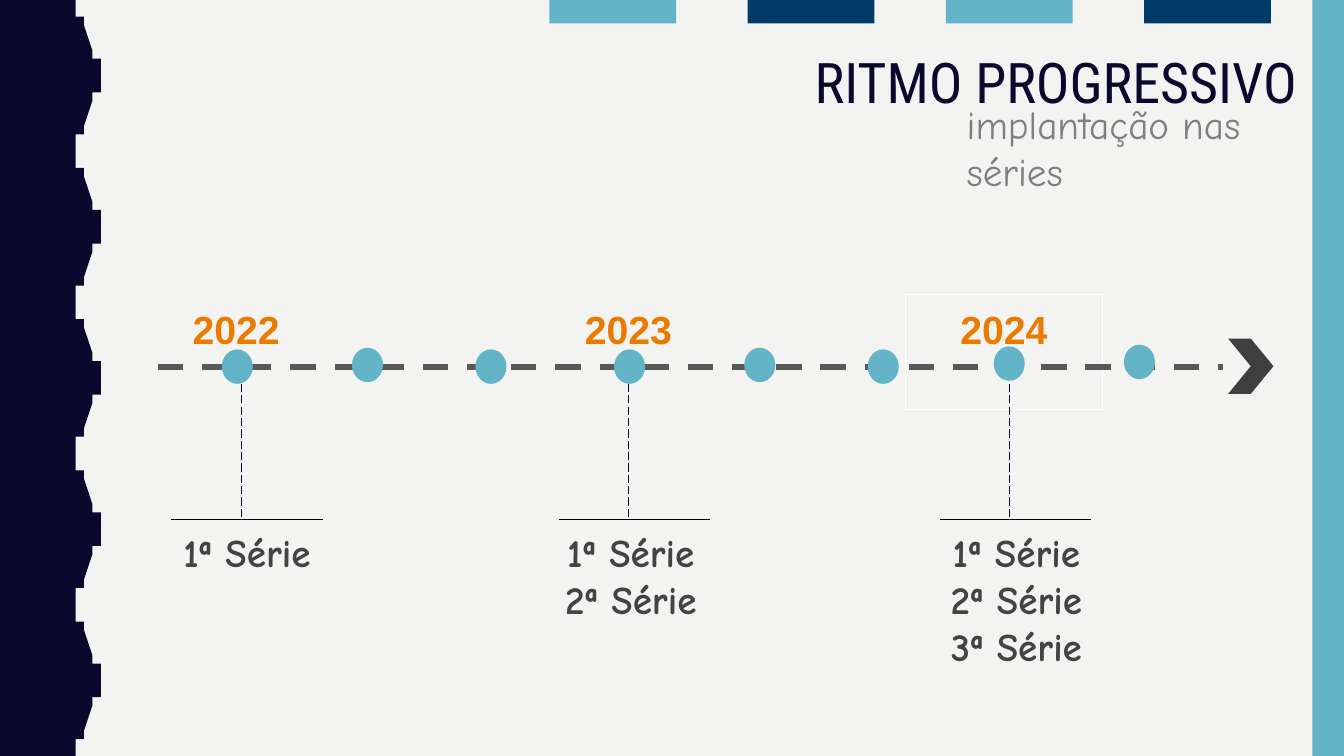
from lxml.etree import SubElement
from pptx import Presentation
from pptx.dml.color import RGBColor
from pptx.enum.dml import MSO_LINE
from pptx.enum.shapes import MSO_CONNECTOR, MSO_SHAPE
from pptx.enum.text import MSO_ANCHOR, PP_ALIGN
from pptx.oxml.ns import qn
from pptx.util import Emu, Inches, Pt

COLS, ROWS = 160, 90
CELL = Inches(1) // 12

PAPER = RGBColor(0xF3, 0xF3, 0xF2)
NIGHT = RGBColor(0x0B, 0x08, 0x2E)
SKY = RGBColor(0x62, 0xB4, 0xC6)
NAVY = RGBColor(0x00, 0x3B, 0x68)
ORANGE = RGBColor(0xEA, 0x7B, 0x00)
AXIS = RGBColor(0x59, 0x59, 0x59)
ARROW = RGBColor(0x3F, 0x3F, 0x3F)
INK = RGBColor(0x43, 0x43, 0x43)
GREY = RGBColor(0x7F, 0x7F, 0x7F)
BLACK = RGBColor(0, 0, 0)
WHITE = RGBColor(0xFF, 0xFF, 0xFF)

HEAD_FONT, YEAR_FONT, BODY_FONT = "Roboto Condensed", "Arial", "Comic Neue"
WAVE_PERIOD = 18
HALF_WAVE = [(9.36, 0), (9.36, 0.84), (9.48, 1.68), (9.6, 2.4), (9.72, 3), (9.96, 3.48),
             (11.16, 6), (11.4, 6.6), (11.52, 7.32), (11.64, 8.16), (11.64, 9)]
AXIS_ROW = 43.7
BAR_ROW = 61.9
DOTS = [(0, 41.6), (15.5, 41.4), (30.2, 41.6)]
STAGES = [
    ("2022", 16.4, 28.7, 19.9, 26.4, 0, 3, ["1ª Série"]),
    ("2023", 63.1, 74.8, 65.6, 73.1, 0, 3, ["1ª Série", "2ª Série"]),
    ("2024", 107.8, 120.2, 111.5, 118.3, 0.36, 2, ["1ª Série", "2ª Série", "3ª Série"]),
]


def grid(*cells):
    return [Emu(round(c * CELL)) for c in cells]


class Deck:
    def __init__(self):
        self.prs = Presentation()
        self.prs.slide_width, self.prs.slide_height = grid(COLS, ROWS)
        self.slide = self.prs.slides.add_slide(self.prs.slide_layouts[6])
        fill = self.slide.background.fill
        fill.solid()
        fill.fore_color.rgb = PAPER

    def paint(self, sp, color):
        sp.shadow.inherit = False
        sp.fill.solid()
        sp.fill.fore_color.rgb = color
        sp.line.fill.background()

    def shape(self, kind, x, y, w, h, color):
        sp = self.slide.shapes.add_shape(kind, *grid(x, y, w, h))
        self.paint(sp, color)

    def outline(self, points, color):
        builder = self.slide.shapes.build_freeform(*points[0], scale=CELL)
        builder.add_line_segments(points[1:], close=True)
        self.paint(builder.convert_to_shape(), color)

    def line(self, x1, y1, x2, y2, color, width, dash=None):
        cn = self.slide.shapes.add_connector(MSO_CONNECTOR.STRAIGHT, *grid(x1, y1, x2, y2))
        cn.line.color.rgb = color
        cn.line.width = Pt(width)
        if dash:
            cn.line.dash_style = dash
        SubElement(cn._element.spPr, qn("a:effectLst"))

    def text(self, x, y, w, h, lines, font, size, color, bold=False, align=PP_ALIGN.CENTER,
             inset=1.2, anchor=MSO_ANCHOR.TOP, spacing=1.0):
        sp = self.slide.shapes.add_textbox(*grid(x, y, w, h))
        tf = sp.text_frame
        tf.word_wrap = True
        tf.vertical_anchor = anchor
        tf.margin_left, tf.margin_right = grid(1.2, 1.2)
        tf.margin_top, tf.margin_bottom = grid(inset, inset)
        tf.text = "\n".join(lines)
        for p in tf.paragraphs:
            p.alignment = align
            p.line_spacing = spacing
            p.font.name = font
            p.font.size = Pt(size)
            p.font.bold = bold
            p.font.color.rgb = color
        return sp


def add_frame(deck):
    period = HALF_WAVE + [(x, WAVE_PERIOD - y) for x, y in HALF_WAVE[-2::-1]]
    edge = [(x, y + n * WAVE_PERIOD) for n in range(ROWS // WAVE_PERIOD) for x, y in period]
    deck.outline([(0, 0), *edge, (0, ROWS)], NIGHT)
    deck.shape(MSO_SHAPE.RECTANGLE, 156.25, 0, 3.75, ROWS, SKY)
    for i, color in enumerate([SKY, NAVY] * 2):
        deck.shape(MSO_SHAPE.RECTANGLE, 65.4 + 23.6 * i, 0, 15.1, 2.8, color)


def add_timeline(deck):
    for year, year_x, _, _, _, _, _, _ in STAGES:
        label = deck.text(year_x, 35.1, 23.4, 13.7, [year], YEAR_FONT, 28, ORANGE, bold=True)
    label.line.color.rgb = WHITE
    label.line.width = Pt(0.75)
    deck.line(18.8, AXIS_ROW, 145.6, AXIS_ROW, AXIS, 4.5, MSO_LINE.DASH)
    deck.shape(MSO_SHAPE.CHEVRON, 146.2, 40.3, 5.4, 6.6, ARROW)
    for _, _, stem_x, list_x, dot_x, lift, dots, grades in STAGES:
        for dx, y in DOTS[:dots]:
            deck.shape(MSO_SHAPE.OVAL, dot_x + dx, y - lift, 3.7, 4.1, SKY)
        deck.line(stem_x, 45.7, stem_x, BAR_ROW, NIGHT, 0.75, MSO_LINE.LONG_DASH)
        deck.line(stem_x - 8.3, BAR_ROW, stem_x + 9.7, BAR_ROW, BLACK, 0.75)
        deck.text(list_x, 61.7, 19, 8 + 5.7 * len(grades), grades, BODY_FONT, 28, INK, bold=True)


def add_heading(deck):
    deck.text(95.8, 4, 60.4, 10.4, ["RITMO PROGRESSIVO"], HEAD_FONT, 40, NIGHT,
              align=PP_ALIGN.LEFT, inset=0.6, anchor=MSO_ANCHOR.BOTTOM, spacing=0.9)
    deck.text(113.9, 11.4, 38.5, 12.5, ["implantação nas séries"], BODY_FONT, 28, GREY,
              align=PP_ALIGN.LEFT, inset=0.6)


def main():
    deck = Deck()
    add_frame(deck)
    add_timeline(deck)
    add_heading(deck)
    deck.prs.save("out.pptx")


if __name__ == "__main__":
    main()
